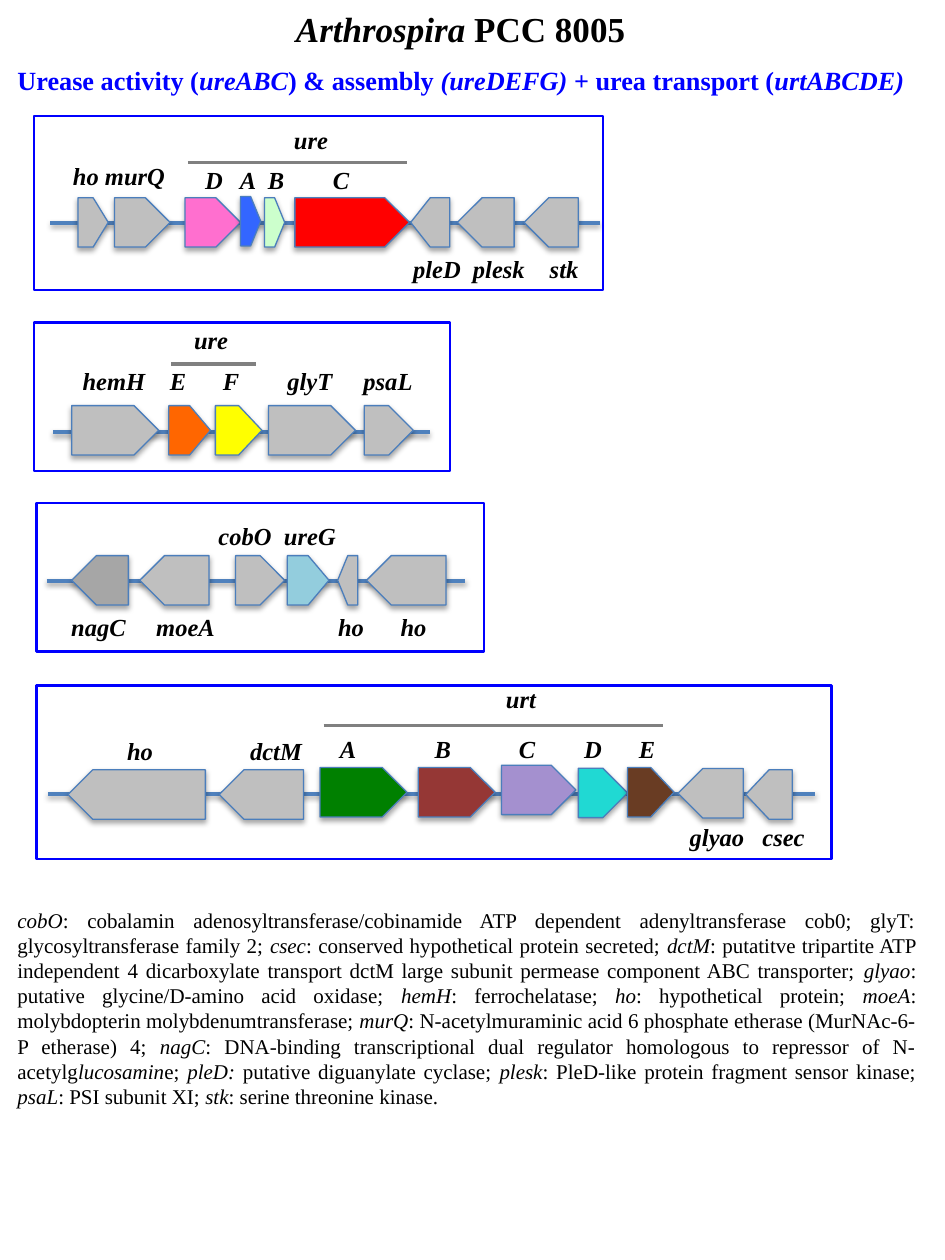
"""Builds a one-slide map of the urease and urea transport gene clusters."""
from dataclasses import dataclass

from lxml.etree import SubElement
from pptx import Presentation
from pptx.dml.color import RGBColor
from pptx.enum.shapes import MSO_CONNECTOR, MSO_SHAPE
from pptx.enum.text import MSO_ANCHOR, PP_ALIGN
from pptx.oxml.ns import qn
from pptx.util import Pt


@dataclass(frozen=True)
class Theme:
    font: str = "Times New Roman"
    title: float = 20
    subtitle: float = 15
    label: float = 14
    body: float = 12
    text: str = "000000"
    frame: str = "0000FF"
    axis: str = "4F81BD"
    outline: str = "4B7EBC"
    bar: str = "808080"


GREY, DARK_GREY = "BFBFBF", "A6A6A6"
GENE_HEIGHT = 28.2

CLUSTERS = [
    {
        "frame": (19.4, 66.2, 325.4, 99.4),
        "axis": (28.8, 342.7, 127.4),
        "bar": (107.3, 232.6, 92.9),
        "genes": [
            (44.6, 113, 17.3, GREY, "right"), (65.5, 113, 31.7, GREY, "right"),
            (105.8, 113, 31.7, "FF6FCF", "right"), (137.5, 112.3, 11.5, "3366FF", "right"),
            (151.2, 113, 11.5, "CCFFCC", "right"), (168.5, 113, 65.5, "FF0000", "right"),
            (234.7, 113, 22.3, GREY, "left"), (261.4, 113, 32.4, GREY, "left"),
            (299.5, 113, 31, GREY, "left"),
        ],
        "labels": [
            (80, [("ure", 177.7)]),
            (100.2, [("ho", 49.1), ("murQ", 77.1)]),
            (102.7, [("D", 122.3), ("A", 141.7), ("B", 157.7), ("C", 194.9)]),
            (153.5, [("pleD", 249.7), ("plesk", 285.1), ("stk", 322.3)]),
        ],
    },
    {
        "frame": (19.4, 184.3, 237.6, 85),
        "axis": (30.2, 245.5, 247),
        "bar": (97.9, 146.2, 208.1),
        "genes": [
            (41, 231.8, 49.7, GREY, "right"), (96.5, 231.8, 23.8, "FF6600", "right"),
            (123.1, 231.8, 26.6, "FFFF00", "right"), (153.4, 231.8, 49.7, GREY, "right"),
            (208.1, 231.8, 28.1, GREY, "right"),
        ],
        "labels": [
            (194.3, [("ure", 120.6)]),
            (217.5, [("hemH", 65.1), ("E", 101.7), ("F", 132), ("glyT", 177.1),
                     ("psaL", 221.7)]),
        ],
    },
    {
        "frame": (20.9, 287.3, 255.6, 85),
        "axis": (26.6, 265.7, 331.9),
        "bar": None,
        "genes": [
            (41, 317.5, 32.4, DARK_GREY, "left"), (79.9, 317.5, 39.6, GREY, "left"),
            (134.6, 317.5, 28.1, GREY, "right"), (164.2, 317.5, 23.8, "93CDDD", "right"),
            (193, 317.5, 11.5, GREY, "left"), (209.5, 317.5, 45.4, GREY, "left"),
        ],
        "labels": [
            (306.2, [("cobO", 140), ("ureG", 177.1)]),
            (358.2, [("nagC", 56.3), ("moeA", 106), ("ho", 200.6), ("ho", 236.3)]),
        ],
    },
    {
        "frame": (20.9, 391.7, 454.3, 99.4),
        "axis": (27.4, 465.8, 453.6),
        "bar": (185, 378.7, 414.7),
        "genes": [
            (38.9, 439.9, 78.5, GREY, "left"), (125.3, 439.9, 48.2, GREY, "left"),
            (182.9, 438.6, 49.7, "008000", "right"), (239, 438.6, 43.9, "953735", "right"),
            (286.6, 437.3, 42.5, "A490CF", "right"), (330.5, 439, 28.1, "20D9D3", "right"),
            (358.6, 438.6, 26.6, "693C23", "right"), (387.4, 439.2, 37.4, GREY, "left"),
            (426.2, 439.9, 26.6, GREY, "left"),
        ],
        "labels": [
            (399.4, [("urt", 297.7)]),
            (429, [("ho", 80), ("dctM", 157.7)]),
            (427.9, [("A", 198.9), ("B", 253.1), ("C", 301.1), ("D", 338.9), ("E", 369.7)]),
            (478.3, [("glyao", 409.7), ("csec", 447.7)]),
        ],
    },
]

TITLE = "*Arthrospira* PCC 8005"
SUBTITLE = ("Urease activity (*ureABC*) & assembly *(ureDEFG) *"
            "+ urea transport (*urtABCDE)*")
LEGEND = (
    "*cobO*: cobalamin adenosyltransferase/cobinamide ATP dependent adenyltransferase cob0; "
    "glyT: glycosyltransferase family 2; *csec*: conserved hypothetical protein secreted; "
    "*dctM*: putatitve tripartite ATP independent 4 dicarboxylate transport dctM large subunit "
    "permease component ABC transporter; *glyao*: putative glycine/D-amino acid oxidase; "
    "*hemH*: ferrochelatase; *ho*: hypothetical protein; *moeA*: molybdopterin "
    "molybdenumtransferase; *murQ*: N-acetylmuraminic acid 6 phosphate etherase "
    "(MurNAc-6-P etherase) 4; *nagC*: DNA-binding transcriptional dual regulator homologous "
    "to repressor of N-acetylg*lucosamin*e; *pleD: *putative diguanylate cyclase; "
    "*plesk*: PleD-like protein fragment sensor kinase; *psaL*: PSI subunit XI; "
    "*stk*: serine threonine kinase."
)


class GeneMap:
    def __init__(self, slide, theme):
        self.slide = slide
        self.theme = theme

    def effects(self, sp, alpha=None, dist=None):
        lst = SubElement(sp._element.spPr, qn("a:effectLst"))
        if alpha:
            shadow = SubElement(lst, qn("a:outerShdw"), blurRad=str(Pt(3.1)),
                                dist=str(Pt(dist)), dir="5400000", rotWithShape="0")
            clr = SubElement(shadow, qn("a:srgbClr"), val="000000")
            SubElement(clr, qn("a:alpha"), val=str(alpha * 1000))

    def line(self, x1, x2, y, color, **shadow):
        sp = self.slide.shapes.add_connector(
            MSO_CONNECTOR.STRAIGHT, Pt(x1), Pt(y), Pt(x2), Pt(y))
        sp.line.color.rgb = RGBColor.from_string(color)
        sp.line.width = Pt(2)
        self.effects(sp, **shadow)

    def gene(self, x, y, w, color, direction):
        sp = self.slide.shapes.add_shape(
            MSO_SHAPE.PENTAGON, Pt(x), Pt(y), Pt(w), Pt(GENE_HEIGHT))
        sp.fill.solid()
        sp.fill.fore_color.rgb = RGBColor.from_string(color)
        sp.line.color.rgb = RGBColor.from_string(self.theme.outline)
        sp.line.width = Pt(0.75)
        if direction == "left":
            sp._element.spPr.xfrm.set("flipH", "1")
        self.effects(sp, alpha=35, dist=1.8)

    def frame(self, x, y, w, h):
        sp = self.slide.shapes.add_shape(MSO_SHAPE.RECTANGLE, Pt(x), Pt(y), Pt(w), Pt(h))
        sp.fill.background()
        sp.line.color.rgb = RGBColor.from_string(self.theme.frame)
        sp.line.width = Pt(1.25)
        sp.shadow.inherit = False

    def text(self, x, y, w, h, marked, size, color, align, bold=True):
        tf = self.slide.shapes.add_textbox(Pt(x), Pt(y), Pt(w), Pt(h)).text_frame
        tf.word_wrap = True
        p = tf.paragraphs[0]
        p.alignment = align
        for i, part in enumerate(marked.split("*")):
            if part:
                r = p.add_run()
                r.text = part
                r.font.name = self.theme.font
                r.font.size = Pt(size)
                r.font.bold = bold
                r.font.italic = i % 2 == 1
                r.font.color.rgb = RGBColor.from_string(color)
        return tf

    def label(self, name, x, y):
        tf = self.text(x - 30, y - 12, 60, 24, f"*{name}*", self.theme.label,
                       self.theme.text, PP_ALIGN.CENTER)
        tf.vertical_anchor = MSO_ANCHOR.MIDDLE

    def cluster(self, data):
        self.line(*data["axis"], self.theme.axis, alpha=38, dist=1.6)
        for gene in data["genes"]:
            self.gene(*gene)
        if data["bar"]:
            self.line(*data["bar"], self.theme.bar)
        self.frame(*data["frame"])
        for y, names in data["labels"]:
            for name, x in names:
                self.label(name, x, y)


def main():
    prs = Presentation()
    prs.slide_width, prs.slide_height = Pt(540), Pt(720)
    theme = Theme()
    s = GeneMap(prs.slides.add_slide(prs.slide_layouts[6]), theme)
    s.text(-6.8, 0.7, 540, 31.7, TITLE, theme.title, theme.text, PP_ALIGN.CENTER)
    s.text(2.9, 33.1, 530, 25.2, SUBTITLE, theme.subtitle, theme.frame, PP_ALIGN.LEFT)
    for data in CLUSTERS:
        s.cluster(data)
    s.text(2.9, 514.8, 527.8, 123.8, LEGEND, theme.body, theme.text,
           PP_ALIGN.JUSTIFY, bold=False)
    prs.save("out.pptx")


if __name__ == "__main__":
    main()
